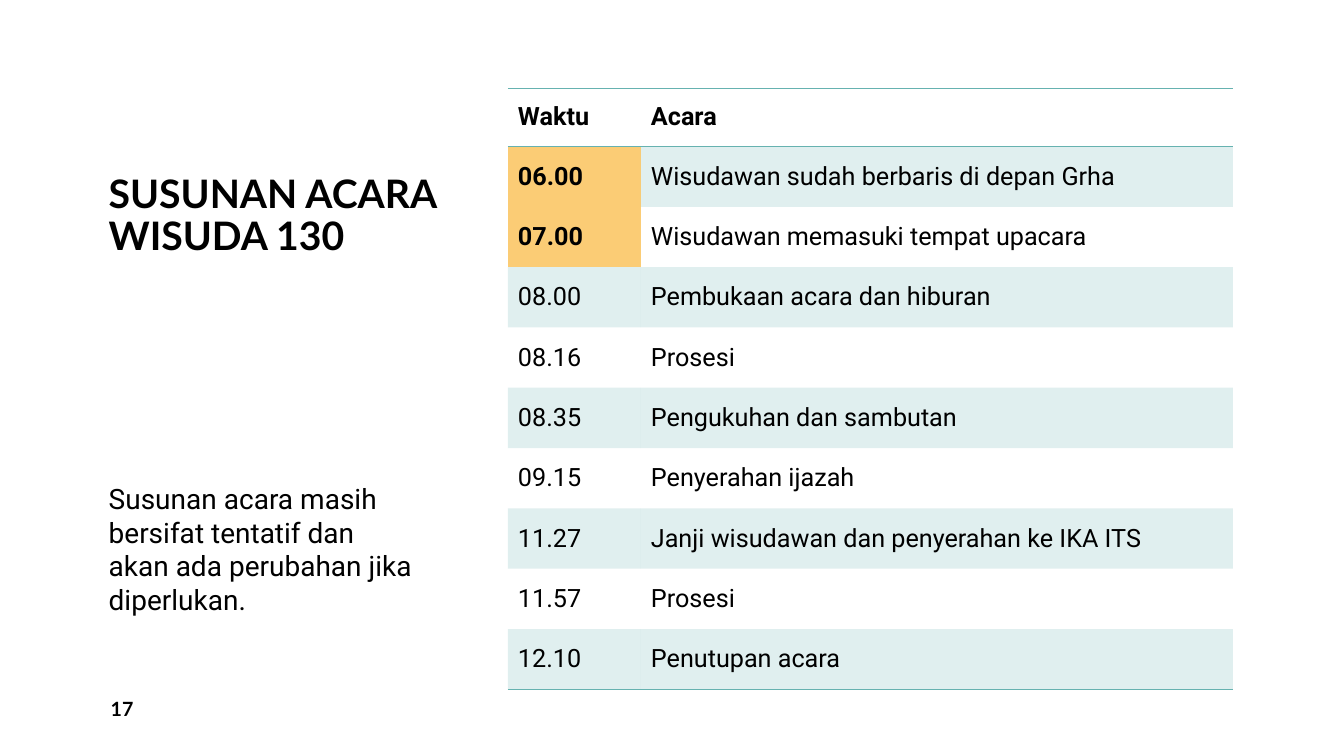
from typing import NamedTuple

from lxml.etree import SubElement
from pptx import Presentation
from pptx.dml.color import RGBColor
from pptx.enum.text import MSO_ANCHOR as Anchor
from pptx.oxml import parse_xml
from pptx.oxml.ns import nsdecls, qn
from pptx.slide import Slide
from pptx.table import Table, _Cell as Cell
from pptx.text.text import _Paragraph as Paragraph
from pptx.util import Cm, Pt

BLACK = RGBColor(0x00, 0x00, 0x00)
TEAL = RGBColor(0x66, 0xB2, 0xB0)
AMBER = RGBColor(0xFB, 0xCC, 0x75)

HEADING_FONT = "Lato"
BODY_FONT = "Roboto"
NO_STYLE_NO_GRID = "{2D5ABB26-0587-4C30-8999-92F81FD0307C}"
BAND_OPACITY = 20
RULE_WIDTH = Pt(1)

TABLE_LEFT, TABLE_TOP = 12.8, 2.22
COLUMN_WIDTHS = (3.35, 14.92)
HEADER_HEIGHT, ROW_HEIGHT = 1.47, 1.52


class TextBlock(NamedTuple):
    text: str
    left: float
    top: float
    width: float
    height: float
    font: str
    size: int
    bold: bool
    anchor: Anchor
    line_spacing: float = 1.0


class Event(NamedTuple):
    time: str
    activity: str
    highlighted: bool = False


TEXT_BLOCKS = (
    TextBlock("SUSUNAN ACARA WISUDA 130", 2.49, 0.38, 9.7, 6.27,
              HEADING_FONT, 28, True, Anchor.BOTTOM, 0.9),
    TextBlock("Susunan acara masih bersifat tentatif dan akan ada perubahan jika diperlukan.",
              2.49, 12.01, 8.38, 4.47, BODY_FONT, 20, False, Anchor.TOP),
    TextBlock("17", 2.54, 17.35, 3.3, 1.02, HEADING_FONT, 14, True, Anchor.MIDDLE),
)

HEADINGS = ("Waktu", "Acara")
EVENTS = (
    Event("06.00", "Wisudawan sudah berbaris di depan Grha", True),
    Event("07.00", "Wisudawan memasuki tempat upacara", True),
    Event("08.00", "Pembukaan acara dan hiburan"),
    Event("08.16", "Prosesi"),
    Event("08.35", "Pengukuhan dan sambutan"),
    Event("09.15", "Penyerahan ijazah"),
    Event("11.27", "Janji wisudawan dan penyerahan ke IKA ITS"),
    Event("11.57", "Prosesi"),
    Event("12.10", "Penutupan acara"),
)


def add_run(paragraph: Paragraph, text: str, font: str, size: int, bold: bool) -> None:
    run = paragraph.add_run()
    run.text = text
    run.font.name = font
    run.font.size = Pt(size)
    run.font.bold = bold
    run.font.color.rgb = BLACK


def add_text_block(slide: Slide, block: TextBlock) -> None:
    shape = slide.shapes.add_textbox(
        Cm(block.left), Cm(block.top), Cm(block.width), Cm(block.height))
    frame = shape.text_frame
    frame.word_wrap = True
    frame.vertical_anchor = block.anchor
    paragraph = frame.paragraphs[0]
    paragraph.line_spacing = block.line_spacing
    add_run(paragraph, block.text, block.font, block.size, block.bold)


def write_cell(cell: Cell, text: str, bold: bool = False) -> None:
    cell.vertical_anchor = Anchor.MIDDLE
    cell.fill.background()
    add_run(cell.text_frame.paragraphs[0], text, BODY_FONT, 18, bold)


def fill_cell(cell: Cell, color: RGBColor, opacity: int = 100) -> None:
    cell.fill.solid()
    cell.fill.fore_color.rgb = color
    if opacity < 100:
        color_element = cell._tc.tcPr.find(".//" + qn("a:srgbClr"))
        SubElement(color_element, qn("a:alpha"), val=str(opacity * 1000))


def rule_row(table: Table, row_index: int, *edges: str) -> None:
    """Draw teal rules on the given edges, lnT before lnB."""
    for cell in table.rows[row_index].cells:
        for position, edge in enumerate(edges):
            cell._tc.get_or_add_tcPr().insert(position, parse_xml(
                f'<a:{edge} {nsdecls("a")} w="{RULE_WIDTH}"><a:solidFill>'
                f'<a:srgbClr val="{TEAL}"/></a:solidFill></a:{edge}>'))


def add_schedule(slide: Slide) -> None:
    heights = [HEADER_HEIGHT] + [ROW_HEIGHT] * len(EVENTS)
    frame = slide.shapes.add_table(
        len(heights), len(COLUMN_WIDTHS), Cm(TABLE_LEFT), Cm(TABLE_TOP),
        Cm(sum(COLUMN_WIDTHS)), Cm(sum(heights)))
    table = frame.table
    table.horz_banding = False
    table._tbl.tblPr.find(qn("a:tableStyleId")).text = NO_STYLE_NO_GRID
    for column, width in zip(table.columns, COLUMN_WIDTHS):
        column.width = Cm(width)
    for row, height in zip(table.rows, heights):
        row.height = Cm(height)

    for column_index, heading in enumerate(HEADINGS):
        write_cell(table.cell(0, column_index), heading, bold=True)
    for row_index, event in enumerate(EVENTS, start=1):
        time_cell, activity_cell = table.rows[row_index].cells
        write_cell(time_cell, event.time, event.highlighted)
        write_cell(activity_cell, event.activity)
        if row_index % 2:
            fill_cell(activity_cell, TEAL, BAND_OPACITY)
        if event.highlighted:
            fill_cell(time_cell, AMBER)
        elif row_index % 2:
            fill_cell(time_cell, TEAL, BAND_OPACITY)

    rule_row(table, 0, "lnT", "lnB")
    rule_row(table, len(EVENTS), "lnB")


def main() -> None:
    presentation = Presentation()
    presentation.slide_width = Cm(33.87)
    presentation.slide_height = Cm(19.05)
    slide = presentation.slides.add_slide(presentation.slide_layouts[6])
    for block in TEXT_BLOCKS:
        add_text_block(slide, block)
    add_schedule(slide)
    presentation.save("out.pptx")


if __name__ == "__main__":
    main()
